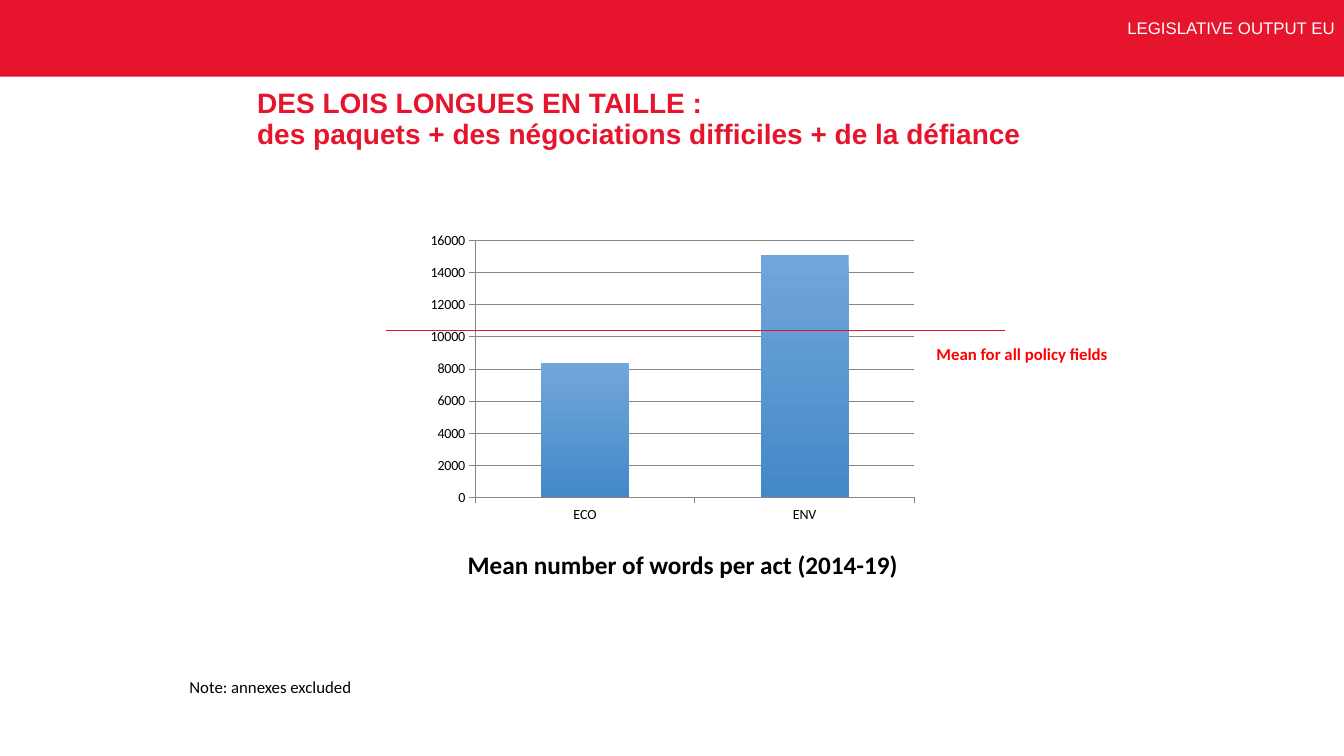
"""Build the slide on the length of EU legislative acts."""
from dataclasses import dataclass

from lxml import etree
from pptx import Presentation
from pptx.chart.data import CategoryChartData
from pptx.dml.color import RGBColor
from pptx.enum.chart import XL_CHART_TYPE, XL_TICK_MARK
from pptx.enum.shapes import MSO_CONNECTOR, MSO_SHAPE
from pptx.enum.text import MSO_ANCHOR, MSO_AUTO_SIZE, PP_ALIGN
from pptx.oxml.ns import qn
from pptx.util import Inches, Pt

RED = RGBColor(0xE6, 0x14, 0x2D)
BRIGHT_RED = RGBColor(0xFF, 0x00, 0x00)
WHITE = RGBColor(0xFF, 0xFF, 0xFF)
BLACK = RGBColor(0x00, 0x00, 0x00)
GREY = RGBColor(0x86, 0x86, 0x86)
BAR_TOP = RGBColor(0x71, 0xA6, 0xDB)
BAR_BOTTOM = RGBColor(0x43, 0x89, 0xC7)


@dataclass(frozen=True)
class Label:
    """A piece of text with its place and look."""
    text: str
    box: tuple[float, float, float, float]
    size: float
    color: RGBColor = BLACK
    font: str = "Calibri"
    bold: bool = False
    align: PP_ALIGN = PP_ALIGN.LEFT
    line_spacing: float = 1.0


TITLE = Label("DES LOIS LONGUES EN TAILLE :\v"
              "des paquets + des négociations difficiles + de la défiance",
              (2.45, 0.75, 9.61, 1.22), 20, RED, "Arial", True, line_spacing=0.9)
SECTION = Label("LEGISLATIVE OUTPUT EU", (3.52, 0.15, 9.82, 0.38), 12, WHITE,
                "Arial", align=PP_ALIGN.RIGHT, line_spacing=0.9)
LABELS = (
    Label("Note: annexes excluded", (1.78, 6.66, 9.65, 0.3), 12),
    Label("Mean for all policy fields", (9.19, 3.36, 2.36, 0.3), 12, BRIGHT_RED, bold=True),
    Label("Mean number of words per act (2014-19)", (4.54, 5.4, 5.43, 0.4), 18, bold=True),
)


def write_label(holder, label: Label) -> None:
    """Place a text holder and fill it with a label."""
    holder.left, holder.top, holder.width, holder.height = map(Inches, label.box)
    frame = holder.text_frame
    frame.word_wrap = True
    frame.auto_size = MSO_AUTO_SIZE.NONE
    frame.vertical_anchor = MSO_ANCHOR.TOP
    frame.text = label.text
    paragraph = frame.paragraphs[0]
    paragraph.alignment = label.align
    paragraph.line_spacing = label.line_spacing
    paragraph.space_before = Pt(0)
    paragraph.font.name = label.font
    paragraph.font.size = Pt(label.size)
    paragraph.font.bold = label.bold
    paragraph.font.color.rgb = label.color


def add_banner(slide) -> None:
    """Draw the red band across the top."""
    banner = slide.shapes.add_shape(MSO_SHAPE.RECTANGLE, 0, 0, Inches(13.33), Inches(0.76))
    banner.shadow.inherit = False
    banner.fill.solid()
    banner.fill.fore_color.rgb = RED
    banner.line.fill.background()
    slide.shapes._spTree.insert(2, banner._element)


def add_words_chart(slide) -> None:
    """Add the column chart of words per act."""
    words = CategoryChartData()
    words.categories = ["ECO", "ENV"]
    words.add_series("Series 1", (8400, 15100))
    chart = slide.shapes.add_chart(XL_CHART_TYPE.COLUMN_CLUSTERED, Inches(4.17), Inches(2.25),
                                   Inches(5), Inches(3), words).chart
    chart.has_legend = False
    chart.has_title = False
    chart.font.name = "Calibri"
    chart.font.size = Pt(10)
    chart.font.color.rgb = BLACK

    policy_axis, words_axis = chart.category_axis, chart.value_axis
    words_axis.minimum_scale, words_axis.maximum_scale = 0, 16000
    words_axis.major_unit = 2000
    words_axis.has_major_gridlines = True
    for axis in (policy_axis, words_axis):
        axis.major_tick_mark = XL_TICK_MARK.OUTSIDE
    for line in (policy_axis.format.line, words_axis.format.line,
                 words_axis.major_gridlines.format.line):
        line.color.rgb = GREY
        line.width = Pt(0.75)

    columns = chart.plots[0]
    columns.gap_width = 150
    columns.vary_by_categories = False
    bar_fill = columns.series[0].format.fill
    bar_fill.gradient()
    bar_fill.gradient_angle = 270
    for stop, color in zip(bar_fill.gradient_stops, (BAR_TOP, BAR_BOTTOM)):
        stop.color.rgb = color


def add_mean_line(slide) -> None:
    """Draw the mean for all policy fields across the chart."""
    mean = slide.shapes.add_connector(MSO_CONNECTOR.STRAIGHT, Inches(3.83), Inches(3.28),
                                      Inches(9.97), Inches(3.28))
    mean.line.color.rgb = RED
    mean.line.width = Pt(1)
    etree.SubElement(mean._element.spPr, qn("a:effectLst"))


def main() -> None:
    """Build and save the slide."""
    deck = Presentation()
    deck.slide_width, deck.slide_height = Inches(13.33), Inches(7.5)
    slide = deck.slides.add_slide(deck.slide_layouts.get_by_name("Content with Caption"))
    content = slide.placeholders[1]._element
    content.getparent().remove(content)

    add_banner(slide)
    write_label(slide.shapes.title, TITLE)
    slide.shapes.title.text_frame.margin_top = Inches(0.14)
    slide.shapes.title.text_frame.margin_right = 0
    write_label(slide.placeholders[2], SECTION)
    add_words_chart(slide)
    add_mean_line(slide)
    for label in LABELS:
        write_label(slide.shapes.add_textbox(0, 0, 0, 0), label)
    deck.save("out.pptx")


if __name__ == "__main__":
    main()
